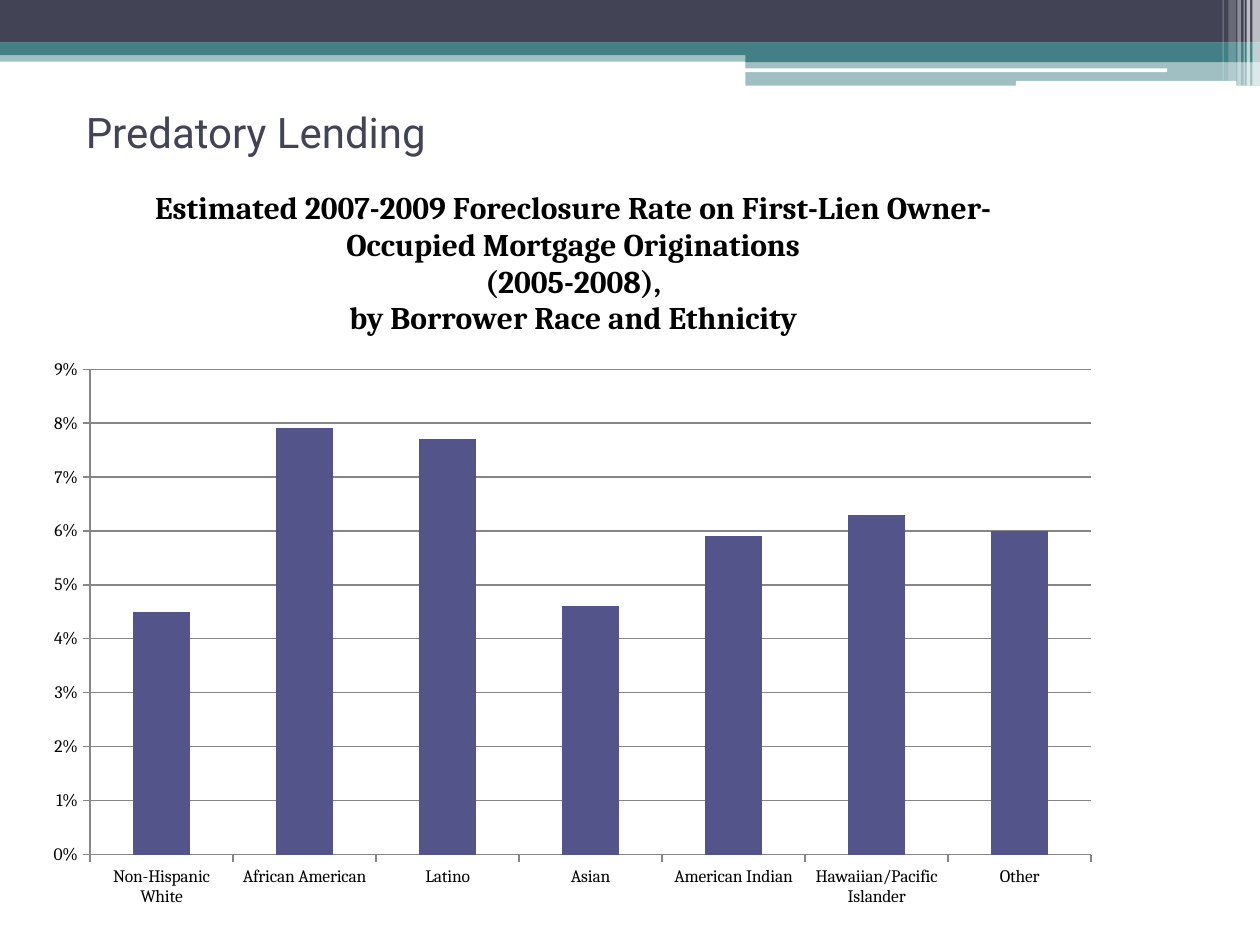
from lxml import etree
from pptx import Presentation
from pptx.chart.data import CategoryChartData
from pptx.dml.color import RGBColor
from pptx.enum.chart import XL_CHART_TYPE as ChartType, XL_TICK_MARK as Tick
from pptx.enum.shapes import MSO_SHAPE as Shape
from pptx.enum.text import MSO_ANCHOR as Anchor, PP_ALIGN as Align
from pptx.oxml import parse_xml
from pptx.oxml.ns import nsdecls, qn
from pptx.util import Pt

NAVY, TEAL, WHITE, BLACK = "424456", "438086", "FFFFFF", "000000"
BAR, GRID = "53548A", "868686"


def paint(target, color, opacity=100):
    """Give a fill or line a solid colour, with opacity in percent."""
    target.fill.solid()
    target.fill.fore_color.rgb = RGBColor.from_string(color)
    if opacity < 100:
        color_node = target.fill._xPr.find(qn("a:solidFill"))[0]
        etree.SubElement(color_node, qn("a:alpha"), val=str(opacity * 1000))


def set_font(font, name, size, color, bold=False):
    font.name, font.size, font.bold = name, Pt(size), bold
    font.color.rgb = RGBColor.from_string(color)


prs = Presentation()
prs.slide_width, prs.slide_height = Pt(720), Pt(540)
slide = prs.slides.add_slide(prs.slide_layouts[5])

# Header: left, top, width, height, colour, opacity, shape
bands = [
    (0, 28.8, 720, 6.4, TEAL, 50, Shape.RECTANGLE),
    (0, 0, 720, 24.4, NAVY, 100, Shape.RECTANGLE),
    (0, 24.3, 720, 7.2, TEAL, 100, Shape.RECTANGLE),
    (426, 28.3, 294, 7.2, TEAL, 100, Shape.RECTANGLE),
    (426, 34.7, 294, 14.2, TEAL, 50, Shape.RECTANGLE),
    (425.7, 39.1, 241.2, 2.2, WHITE, 100, Shape.ROUNDED_RECTANGLE),
    (580.5, 46.3, 126, 2.9, WHITE, 100, Shape.ROUNDED_RECTANGLE),
]
stripes = [
    (715.6, 4.4, 49, 65), (712.4, 2, 49, 65), (710.6, 0.7, 49, 60),
    (707.1, 2, 49, 40), (702, 4.3, 46.1, 20), (698.6, 0.7, 46.1, 30),
]
bands += [(left, 0, width, height, WHITE, opacity, Shape.RECTANGLE)
          for left, width, height, opacity in stripes]
for left, top, width, height, color, opacity, preset in bands:
    band = slide.shapes.add_shape(preset, Pt(left), Pt(top), Pt(width), Pt(height))
    band.shadow.inherit = False
    band.line.fill.background()
    paint(band, color, opacity)

heading = slide.shapes.title
heading.left, heading.top, heading.width, heading.height = Pt(36), Pt(54), Pt(648), Pt(42)
heading_frame = heading.text_frame
heading_frame.text = "Predatory Lending"
heading_frame.vertical_anchor = Anchor.MIDDLE
heading_frame.margin_left = Pt(13)
heading_frame.paragraphs[0].alignment = Align.LEFT
set_font(heading_frame.paragraphs[0].runs[0].font, "Roboto", 24, NAVY)

rates = CategoryChartData(number_format="0.0%")
rates.categories = ["Non-Hispanic White", "African American", "Latino", "Asian",
                    "American Indian", "Hawaiian/Pacific Islander", "Other"]
rates.add_series("Series 1", [0.045, 0.079, 0.077, 0.046, 0.059, 0.063, 0.06])
chart = slide.shapes.add_chart(ChartType.COLUMN_STACKED, Pt(18.7), Pt(92.9),
                               Pt(617.8), Pt(434.2), rates).chart
set_font(chart.font, "Cambria", 10, BLACK)
chart.has_legend = False

chart.has_title = True
chart_title = chart.chart_title.text_frame
chart_title.text = ("Estimated 2007-2009 Foreclosure Rate on First-Lien "
                    "Owner-Occupied Mortgage Originations\n"
                    "(2005-2008),\nby Borrower Race and Ethnicity")
for paragraph in chart_title.paragraphs:
    set_font(paragraph.runs[0].font, "Cambria", 18, BLACK, bold=True)

plot = chart.plots[0]
plot.gap_width, plot.overlap, plot.vary_by_categories = 150, 100, False
paint(plot.series[0].format, BAR)

rate_axis = chart.value_axis
rate_axis.minimum_scale, rate_axis.maximum_scale, rate_axis.major_unit = 0, 0.09, 0.01
rate_axis.tick_labels.number_format = "0%"
rate_axis.tick_labels.number_format_is_linked = False
rate_axis.has_major_gridlines = True
for axis in (rate_axis, chart.category_axis):
    axis.major_tick_mark, axis.minor_tick_mark = Tick.OUTSIDE, Tick.NONE
for ruled in (rate_axis, chart.category_axis, rate_axis.major_gridlines):
    paint(ruled.format.line, GRID)
    ruled.format.line.width = Pt(0.75)

# Fix the inner plot area as fractions of the chart
plot_area = chart._chartSpace.chart.plotArea
for old_layout in plot_area.findall(qn("c:layout")):
    plot_area.remove(old_layout)
fractions = "".join(f'<c:{key} val="{value}"/>' for key, value in
                    [("x", 0.053), ("y", 0.272), ("w", 0.926), ("h", 0.639)])
plot_area.insert(0, parse_xml(
    f'<c:layout {nsdecls("c")}><c:manualLayout><c:layoutTarget val="inner"/>'
    f'<c:xMode val="edge"/><c:yMode val="edge"/>{fractions}'
    '</c:manualLayout></c:layout>'))

prs.save("out.pptx")
